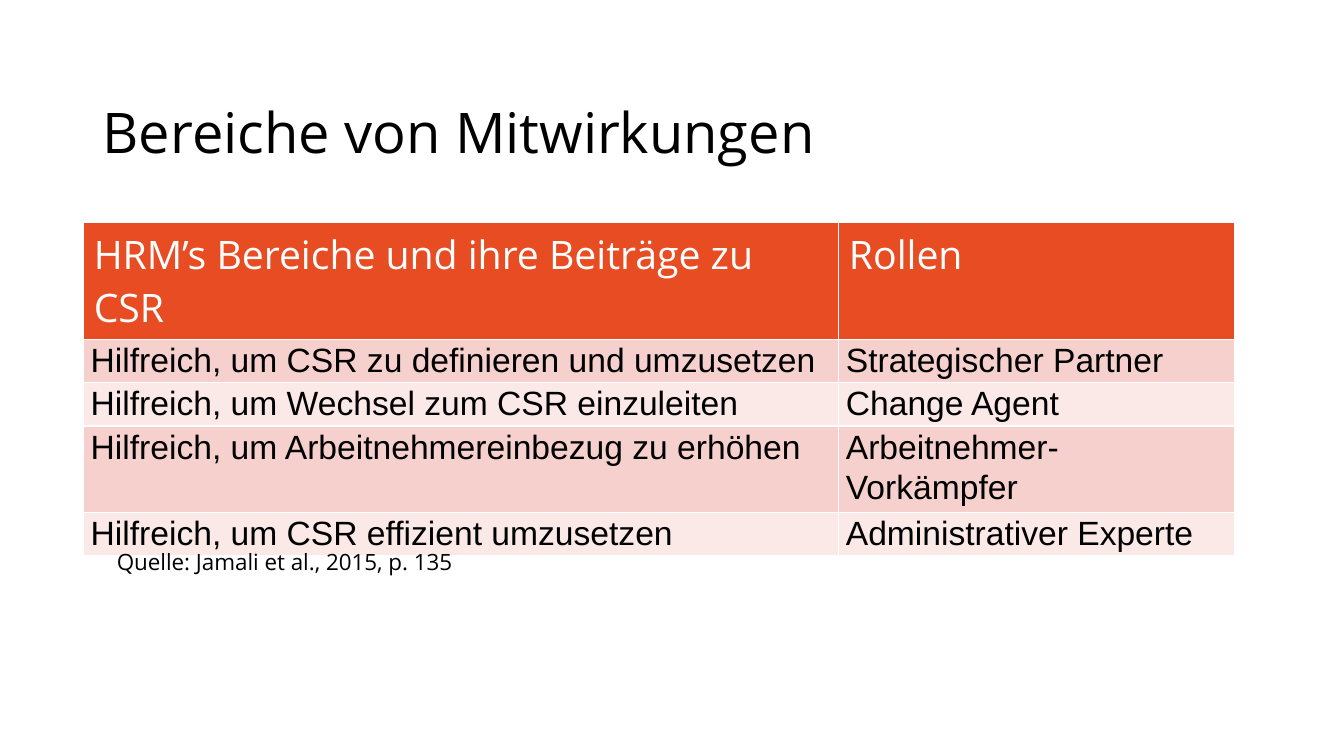
import pptx
import pptx.dml.color
import pptx.enum.text
import pptx.oxml
import pptx.oxml.ns
import pptx.util
from pptx.util import Inches

TITLE = "Bereiche von Mitwirkungen"
HEADINGS = ("HRM’s Bereiche und ihre Beiträge zu CSR", "Rollen")
ROLES = [
    ("Hilfreich, um CSR zu definieren und umzusetzen", "Strategischer Partner"),
    ("Hilfreich, um Wechsel zum CSR einzuleiten", "Change Agent"),
    ("Hilfreich, um Arbeitnehmereinbezug zu erhöhen", "Arbeitnehmer-Vorkämpfer"),
    ("Hilfreich, um CSR effizient umzusetzen", "Administrativer Experte"),
]
CITATION = "Quelle: Jamali et al., 2015, p. 135"

COLORS = {"text": "000000", "white": "FFFFFF", "header": "E84C22",
          "odd": "F6D0CD", "even": "FBE9E8"}
COLUMN_WIDTHS = (7.49, 3.93)
ROW_HEIGHTS = (1.16, 0.41, 0.41, 0.8, 0.41)


def rgb(name):
    return pptx.dml.color.RGBColor.from_string(COLORS[name])


def write(frame, text, font, size, color, spacing=None):
    frame.word_wrap = True
    frame.text = text
    paragraph = frame.paragraphs[0]
    if spacing:
        paragraph.line_spacing = spacing
    style = paragraph.runs[0].font
    style.name, style.size = font, pptx.util.Pt(size)
    style.bold = False
    style.color.rgb = rgb(color)


def add_text(slide, box, text, size, anchor, spacing=None):
    frame = slide.shapes.add_textbox(*map(Inches, box)).text_frame
    write(frame, text, "Open Sans", size, "text", spacing)
    frame.vertical_anchor = anchor
    return frame


def add_borders(cell):
    properties = cell._tc.get_or_add_tcPr()
    for index, side in enumerate("LRTB"):
        properties.insert(index, pptx.oxml.parse_xml(
            f'<a:ln{side} {pptx.oxml.ns.nsdecls("a")} w="{pptx.util.Pt(1)}">'
            f'<a:solidFill><a:srgbClr val="{COLORS["white"]}"/></a:solidFill></a:ln{side}>'))


def add_roles_table(slide):
    rows = [HEADINGS, *ROLES]
    table = slide.shapes.add_table(
        len(rows), len(HEADINGS), Inches(0.83), Inches(2.21),
        Inches(sum(COLUMN_WIDTHS)), Inches(sum(ROW_HEIGHTS))).table
    for column, width in zip(table.columns, COLUMN_WIDTHS):
        column.width = Inches(width)
    for r, (texts, height) in enumerate(zip(rows, ROW_HEIGHTS)):
        table.rows[r].height = Inches(height)
        for c, text in enumerate(texts):
            cell = table.cell(r, c)
            cell.fill.solid()
            if r == 0:
                cell.fill.fore_color.rgb = rgb("header")
                write(cell.text_frame, text, "Open Sans", 28, "white")
            else:
                cell.fill.fore_color.rgb = rgb("odd" if r % 2 else "even")
                cell.margin_left = cell.margin_right = Inches(0.07)
                cell.margin_top = cell.margin_bottom = 0
                write(cell.text_frame, text, "Arial", 24, "text", 1.07)
            add_borders(cell)


def main():
    deck = pptx.Presentation()
    deck.slide_width, deck.slide_height = Inches(13.33), Inches(7.5)
    slide = deck.slides.add_slide(deck.slide_layouts[6])
    anchors = pptx.enum.text.MSO_ANCHOR
    add_text(slide, (0.92, 0.84, 11.5, 0.85), TITLE, 40, anchors.BOTTOM, 0.9)
    add_roles_table(slide)
    citation = add_text(slide, (1.06, 5.39, 7.72, 0.37), CITATION, 16, anchors.TOP)
    citation.auto_size = pptx.enum.text.MSO_AUTO_SIZE.SHAPE_TO_FIT_TEXT
    deck.save("out.pptx")


if __name__ == "__main__":
    main()
